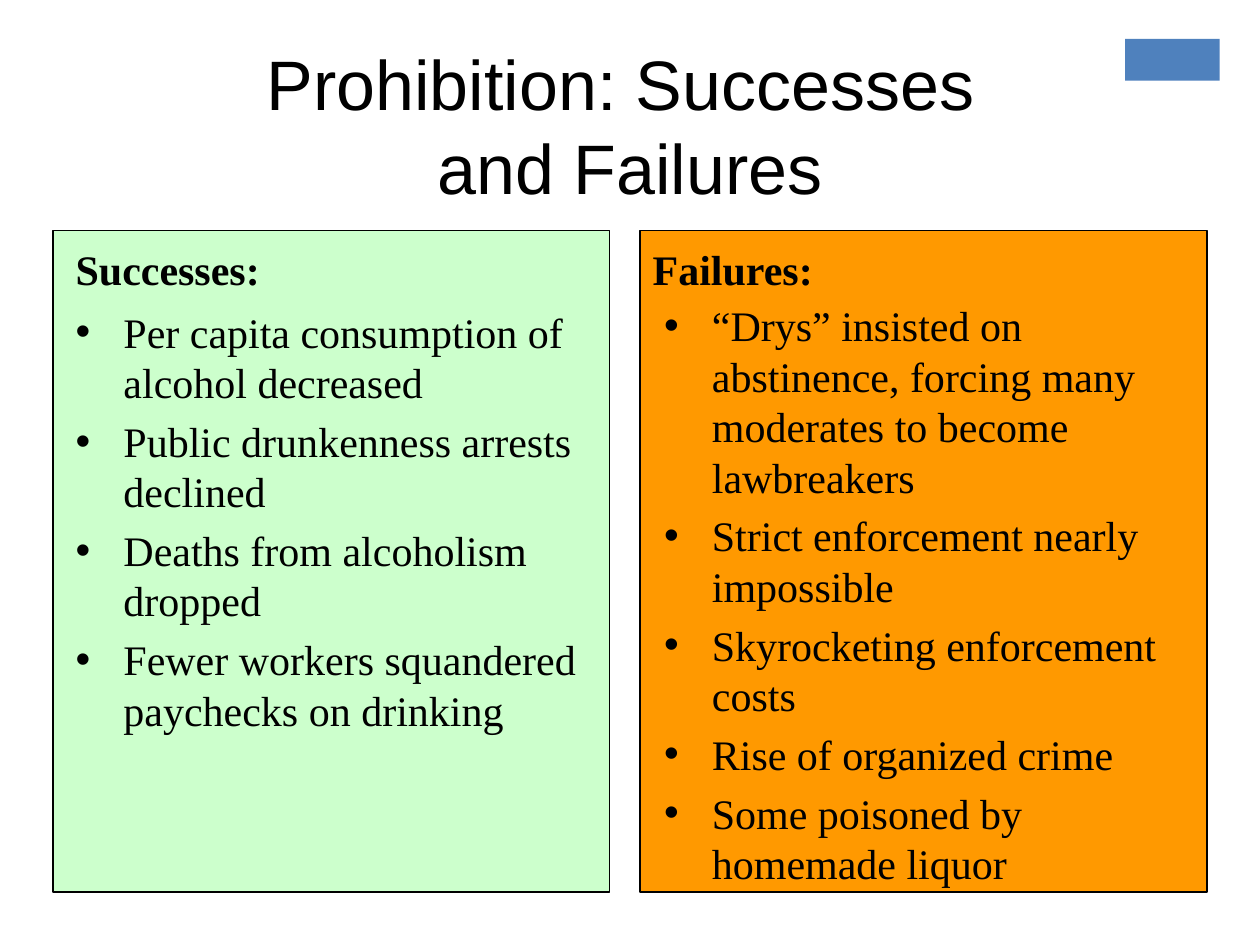
import pptx
import pptx.dml.color
import pptx.enum.shapes
import pptx.enum.text
import pptx.oxml
import pptx.oxml.ns
import pptx.util

Inches = pptx.util.Inches
Pt = pptx.util.Pt
Anchor = pptx.enum.text.MSO_ANCHOR
Align = pptx.enum.text.PP_ALIGN


def paint(color_format, value):
    color_format.rgb = pptx.dml.color.RGBColor.from_string(value)


def write(paragraph, text, name, size, bold=False):
    run = paragraph.add_run()
    run.text = text
    run.font.name = name
    run.font.size = Pt(size)
    run.font.bold = bold
    paint(run.font.color, "000000")


presentation = pptx.Presentation()
presentation.slide_width = Inches(10)
presentation.slide_height = Inches(7.5)
slide = presentation.slides.add_slide(presentation.slide_layouts.get_by_name("Comparison"))
title, left_header, left_list, right_header, right_list = slide.placeholders

panels = [
    ((8.93, 0.31, 0.75, 0.33), "4F81BD", False),
    ((5.08, 1.83, 4.5, 5.25), "FF9900", True),
    ((0.42, 1.83, 4.42, 5.25), "CCFFCC", True),
]
for position, (box, fill, outlined) in enumerate(panels, start=2):
    shape = slide.shapes.add_shape(
        pptx.enum.shapes.MSO_SHAPE.RECTANGLE, *[Inches(length) for length in box])
    shape.shadow.inherit = False
    shape.fill.solid()
    paint(shape.fill.fore_color, fill)
    if outlined:
        paint(shape.line.color, "000000")
        shape.line.width = Pt(0.75)
    else:
        shape.line.fill.background()
    slide.shapes._spTree.insert(position, shape._element)

frames = [
    (title, (0.5, 0.3, 9, 1.37), Anchor.MIDDLE),
    (left_header, (0.5, 1.68, 4.42, 0.7), Anchor.BOTTOM),
    (left_list, (0.5, 2.38, 4.42, 4.32), Anchor.TOP),
    (right_header, (5.08, 1.68, 4.42, 0.7), Anchor.BOTTOM),
    (right_list, (5.17, 2.33, 4.5, 4.75), Anchor.TOP),
]
for placeholder, box, anchor in frames:
    placeholder.left, placeholder.top, placeholder.width, placeholder.height = map(Inches, box)
    placeholder.text_frame.auto_size = pptx.enum.text.MSO_AUTO_SIZE.NONE
    placeholder.text_frame.word_wrap = True
    placeholder.text_frame.vertical_anchor = anchor

paragraph = title.text_frame.paragraphs[0]
paragraph.alignment = Align.CENTER
write(paragraph, "Prohibition: Successes ", "Arial", 40)
paragraph.add_line_break()
write(paragraph, "and Failures", "Arial", 40)

columns = [
    (left_header, "Successes:", left_list, [
        "Per capita consumption of alcohol decreased",
        "Public drunkenness arrests declined",
        "Deaths from alcoholism dropped",
        "Fewer workers squandered paychecks on drinking",
    ]),
    (right_header, "Failures:", right_list, [
        "“Drys” insisted on abstinence, forcing many moderates to become lawbreakers",
        "Strict enforcement nearly impossible",
        "Skyrocketing enforcement costs",
        "Rise of organized crime",
        "Some poisoned by homemade liquor",
    ]),
]
for header, heading, bullet_list, items in columns:
    paragraph = header.text_frame.paragraphs[0]
    paragraph.space_before = Pt(0)
    write(paragraph, heading, "Times New Roman", 24, True)
    for index, item in enumerate(items):
        frame = bullet_list.text_frame
        paragraph = frame.add_paragraph() if index else frame.paragraphs[0]
        paragraph.space_before = Pt(4.8 if index else 0)
        properties = paragraph._p.get_or_add_pPr()
        properties.set("marL", str(Inches(0.38)))
        properties.set("indent", str(-Inches(0.38)))
        bullet = pptx.oxml.parse_xml(
            f'<a:buChar {pptx.oxml.ns.nsdecls("a")} char="•"/>')
        properties.append(bullet)
        write(paragraph, item, "Times New Roman", 24)

presentation.save("out.pptx")
